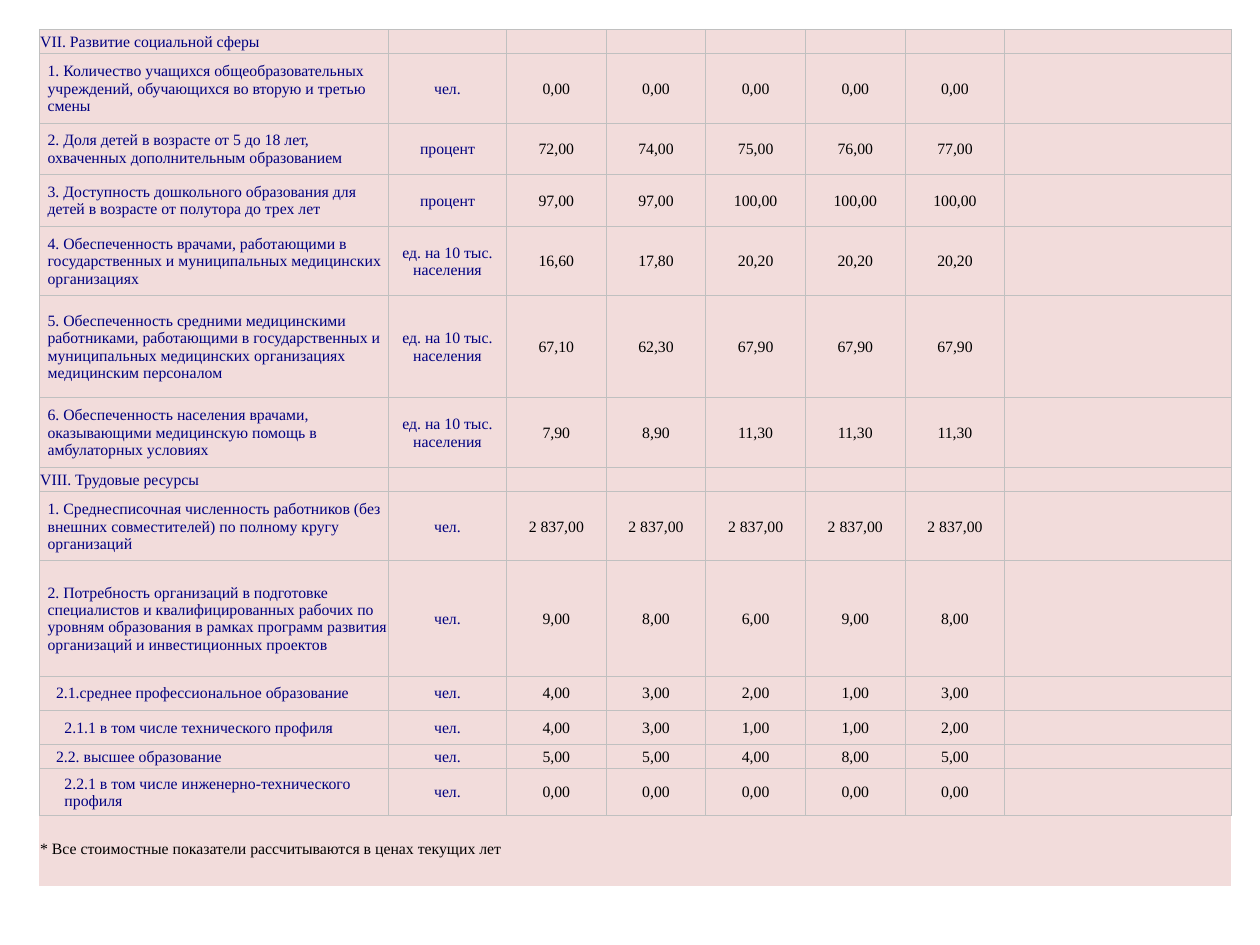
import pptx
import pptx.dml.color
import pptx.enum.text
import pptx.oxml
import pptx.oxml.ns
import pptx.util
from lxml import etree
from pptx.util import Cm

NAVY = pptx.dml.color.RGBColor(0x00, 0x00, 0x80)
BLACK = pptx.dml.color.RGBColor(0x00, 0x00, 0x00)
PINK = pptx.dml.color.RGBColor(0xF2, 0xDC, 0xDB)
SILVER = pptx.dml.color.RGBColor(0xC0, 0xC0, 0xC0)
FONT_SIZE = pptx.util.Pt(9)
BORDER_WIDTH = pptx.util.Pt(0.5)
PER_10K = "ед. на 10 тыс. населения"

indicators = [
    (0.49, 0, "VII. Развитие социальной сферы", "", []),
    (1.4, 1, "1. Количество учащихся общеобразовательных учреждений, обучающихся во вторую и третью смены",
     "чел.", ["0,00"] * 5),
    (1.04, 1, "2. Доля детей в возрасте от 5 до 18 лет, охваченных дополнительным образованием",
     "процент", ["72,00", "74,00", "75,00", "76,00", "77,00"]),
    (1.04, 1, "3. Доступность дошкольного образования для детей в возрасте от полутора до трех лет",
     "процент", ["97,00", "97,00", "100,00", "100,00", "100,00"]),
    (1.4, 1, "4. Обеспеченность врачами, работающими в государственных и муниципальных медицинских организациях",
     PER_10K, ["16,60", "17,80", "20,20", "20,20", "20,20"]),
    (2.06, 1, "5. Обеспеченность средними медицинскими работниками, работающими в государственных "
     "и муниципальных медицинских организациях медицинским персоналом",
     PER_10K, ["67,10", "62,30", "67,90", "67,90", "67,90"]),
    (1.4, 1, "6. Обеспеченность населения врачами, оказывающими медицинскую помощь в амбулаторных условиях",
     PER_10K, ["7,90", "8,90", "11,30", "11,30", "11,30"]),
    (0.49, 0, "VIII. Трудовые ресурсы", "", []),
    (1.4, 1, "1. Среднесписочная численность работников (без внешних совместителей) по полному кругу организаций",
     "чел.", ["2 837,00"] * 5),
    (2.32, 1, "2. Потребность организаций в подготовке специалистов и квалифицированных рабочих "
     "по уровням образования в рамках программ развития организаций и инвестиционных проектов",
     "чел.", ["9,00", "8,00", "6,00", "9,00", "8,00"]),
    (0.69, 2, "2.1.среднее профессиональное образование", "чел.", ["4,00", "3,00", "2,00", "1,00", "3,00"]),
    (0.69, 3, "2.1.1 в том числе технического профиля", "чел.", ["4,00", "3,00", "1,00", "1,00", "2,00"]),
    (0.49, 2, "2.2. высшее образование", "чел.", ["5,00", "5,00", "4,00", "8,00", "5,00"]),
    (0.94, 3, "2.2.1 в том числе инженерно-технического профиля", "чел.", ["0,00"] * 5),
    (0.49, 0, "", "", []),
    (0.94, 0, "* Все стоимостные показатели рассчитываются в ценах текущих лет", "", []),
]
column_widths = [7.04, 2.38] + [2.01] * 5 + [4.56]
bordered_rows = len(indicators) - 2
footnote_row = len(indicators) - 1


def add_border(cell, side, visible):
    line = etree.SubElement(cell._tc.get_or_add_tcPr(), pptx.oxml.ns.qn("a:ln" + side), w=str(BORDER_WIDTH))
    if visible:
        fill = etree.SubElement(line, pptx.oxml.ns.qn("a:solidFill"))
        etree.SubElement(fill, pptx.oxml.ns.qn("a:srgbClr"), val=str(SILVER))
    else:
        etree.SubElement(line, pptx.oxml.ns.qn("a:noFill"))


def write_cell(cell, text, color, alignment):
    paragraph = cell.text_frame.paragraphs[0]
    if not text:
        etree.SubElement(paragraph._p, pptx.oxml.ns.qn("a:endParaRPr"), sz=str(int(FONT_SIZE.pt * 100)))
        return
    paragraph.text = text
    paragraph.alignment = alignment
    font = paragraph.runs[0].font
    font.name = "Times New Roman"
    font.size = FONT_SIZE
    font.color.rgb = color


presentation = pptx.Presentation()
presentation.slide_width = Cm(25.4)
presentation.slide_height = Cm(19.05)
slide = presentation.slides.add_slide(presentation.slide_layouts[6])

total_height = sum(indicator[0] for indicator in indicators)
forecast = slide.shapes.add_table(
    len(indicators), len(column_widths), Cm(0.79), Cm(0.59), Cm(sum(column_widths)), Cm(total_height)
).table
forecast.first_row = False
forecast.horz_banding = False
for column, width in zip(forecast.columns, column_widths):
    column.width = Cm(width)

for row_index, (height, level, label, unit, values) in enumerate(indicators):
    forecast.rows[row_index].height = Cm(height)
    entries = [label, unit] + (values or [""] * 5) + [""]
    for column_index, entry in enumerate(entries):
        cell = forecast.cell(row_index, column_index)
        cell.margin_left = Cm(max(0.02, 0.17 * level)) if column_index == 0 else Cm(0.02)
        cell.margin_top = cell.margin_right = Cm(0.02)
        cell.margin_bottom = 0
        if row_index != footnote_row:
            cell.vertical_anchor = pptx.enum.text.MSO_ANCHOR.MIDDLE
        in_grid = row_index < bordered_rows
        for side in "LRTB":
            add_border(cell, side, in_grid or (side == "T" and row_index == bordered_rows))
        cell.fill.solid()
        cell.fill.fore_color.rgb = PINK
        color = NAVY if column_index < 2 and in_grid else BLACK
        alignment = pptx.enum.text.PP_ALIGN.CENTER if column_index else pptx.enum.text.PP_ALIGN.LEFT
        write_cell(cell, entry, color, alignment)

forecast.cell(footnote_row, 0).merge(forecast.cell(footnote_row, 1))

presentation.save("out.pptx")
